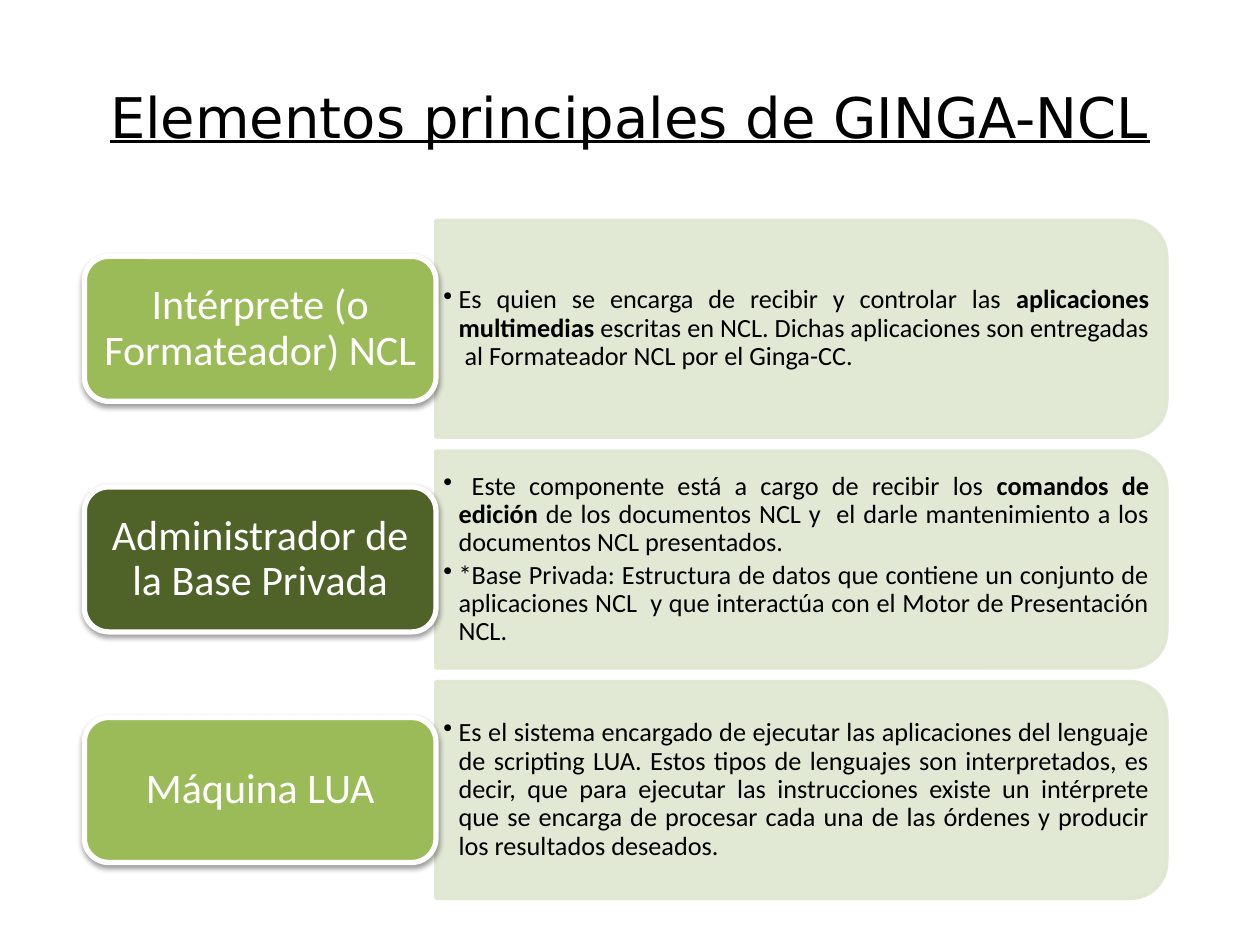
from lxml.etree import SubElement
from pptx import Presentation
from pptx.dml.color import RGBColor
from pptx.enum.shapes import MSO_SHAPE
from pptx.enum.text import MSO_ANCHOR, PP_ALIGN
from pptx.oxml.ns import qn
from pptx.util import Emu, Inches, Pt

TITLE = "Elementos principales de GINGA-NCL"
ROWS = [
    ("Intérprete (o Formateador) NCL", "9BBB59", [
        [("Es quien se encarga de recibir y controlar las ", False),
         ("aplicaciones multimedias", True),
         (" escritas en NCL. Dichas aplicaciones son entregadas  al Formateador NCL "
          "por el Ginga-CC.", False)]]),
    ("Administrador de la Base Privada", "4F6228", [
        [(" Este componente está a cargo de recibir los ", False),
         ("comandos de edición ", True),
         ("de los documentos NCL y  el darle mantenimiento a los documentos NCL "
          "presentados. ", False)],
        [("*Base Privada: Estructura de datos que contiene un conjunto de aplicaciones "
          "NCL  y que interactúa con el Motor de Presentación NCL.", False)]]),
    ("Máquina LUA", "9BBB59", [
        [("Es el sistema encargado de ejecutar las aplicaciones del lenguaje de scripting "
          "LUA. Estos tipos de lenguajes son interpretados, es decir, que para ejecutar las "
          "instrucciones existe un intérprete que se encarga de procesar cada una de las "
          "órdenes y producir los resultados deseados.", False)]]),
]
FIRST, PITCH = 2.61, 1.83
LABEL_X, LABEL_W, LABEL_H = 0.67, 2.79, 1.15
PANEL_X, PANEL_W, PANEL_H = LABEL_X + LABEL_W, 5.8, 1.72
BODY_W, BODY_H = 5.72, 1.55


def color(code):
    return RGBColor.from_string(code)


def box(x, mid, w, h):
    return [Inches(v) for v in (x, mid - h / 2, w, h)]


def style(run, size, code, face="Calibri"):
    run.font.size, run.font.name = Pt(size), face
    run.font.color.rgb = color(code)


def add_node(root, tag, **attrs):
    return SubElement(root, qn(tag), attrs)


def add_shape(kind, place, fill, line, width):
    shape = slide.shapes.add_shape(kind, *place)
    shape.shadow.inherit = False
    shape.fill.solid()
    shape.fill.fore_color.rgb = color(fill)
    shape.line.color.rgb = color(line)
    shape.line.width = Pt(width)
    return shape


def add_text(place):
    frame = slide.shapes.add_textbox(*place).text_frame
    frame.word_wrap = True
    frame.vertical_anchor = MSO_ANCHOR.MIDDLE
    return frame


def add_panel(mid):
    left = PANEL_X + (PANEL_W - PANEL_H) / 2
    panel = add_shape(MSO_SHAPE.ROUND_2_SAME_RECTANGLE,
                      box(left, mid, PANEL_H, PANEL_W), "DEE7D1", "DEE7D1", 2)
    panel.rotation = 90
    for tone in panel._element.spPr.iter(qn("a:srgbClr")):
        add_node(tone, "a:alpha", val="90000")


def add_body(mid, items):
    frame = add_text(box(PANEL_X, mid, BODY_W, BODY_H))
    frame.margin_left = frame.margin_right = Inches(0.06)
    frame.margin_top = frame.margin_bottom = Inches(0.03)
    for i, item in enumerate(items):
        para = frame.add_paragraph() if i else frame.paragraphs[0]
        para.alignment, para.level = PP_ALIGN.JUSTIFY, 1
        para.line_spacing, para.space_after = 0.9, Pt(2.25)
        props = para._p.get_or_add_pPr()
        props.set("marL", str(Inches(0.12)))
        props.set("indent", str(-Inches(0.12)))
        add_node(props, "a:buChar", char="•")
        for words, bold in item:
            run = para.add_run()
            run.text = words
            style(run, 15, "000000")
            run.font.bold = bold


def add_label(mid, words, fill):
    label = add_shape(MSO_SHAPE.ROUNDED_RECTANGLE,
                      box(LABEL_X, mid, LABEL_W, LABEL_H), fill, "FFFFFF", 3)
    effects = label._element.spPr.find(qn("a:effectLst"))
    shade = add_node(effects, "a:outerShdw", blurRad=str(Pt(3.1)), dist=str(Pt(1.6)),
                     dir="5400000", rotWithShape="0")
    tone = add_node(shade, "a:srgbClr", val="000000")
    add_node(tone, "a:alpha", val="38000")
    frame = label.text_frame
    frame.text, frame.word_wrap = words, True
    frame.vertical_anchor = MSO_ANCHOR.MIDDLE
    para = frame.paragraphs[0]
    para.alignment, para.line_spacing = PP_ALIGN.CENTER, 0.9
    para.space_after = Pt(8.4)
    style(para.runs[0], 24, "FFFFFF")


deck = Presentation()
deck.slide_width, deck.slide_height = Inches(10), Inches(7.5)
slide = deck.slides.add_slide(deck.slide_layouts[6])

for n, (name, fill, items) in enumerate(ROWS):
    mid = FIRST + n * PITCH
    add_panel(mid)
    add_body(mid, items)
    add_label(mid, name, fill)

head = add_text([Inches(v) for v in (0.5, 0.3, 9, 1.25)])
head.text = TITLE
para = head.paragraphs[0]
para.alignment = PP_ALIGN.CENTER
style(para.runs[0], 32, "000000", "DejaVu Sans")
para.runs[0].font.underline = True

deck.save("out.pptx")
